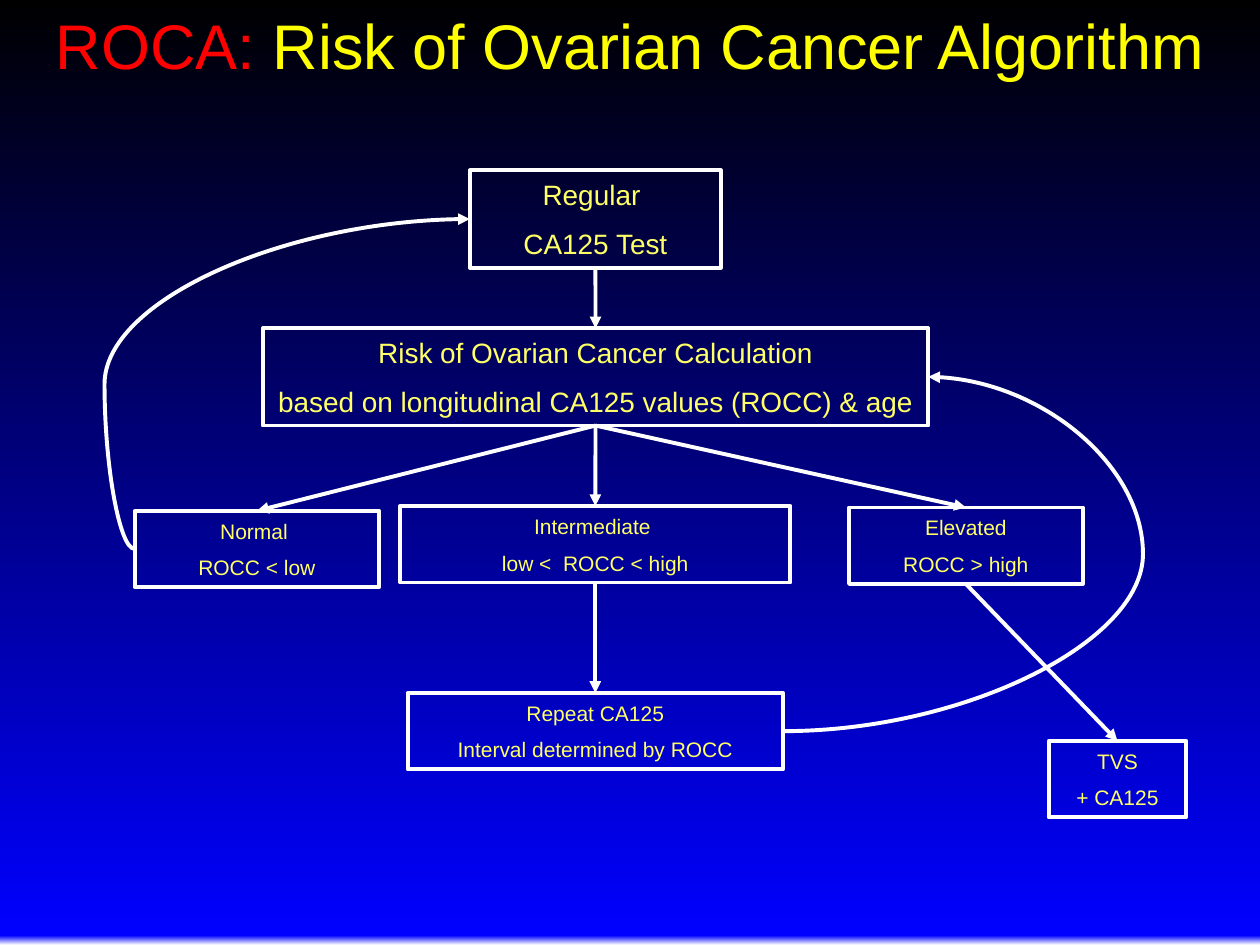
import copy
from dataclasses import dataclass
from typing import Optional

import lxml.etree
import pptx
import pptx.dml.color
import pptx.enum.dml
import pptx.enum.shapes
import pptx.enum.text
import pptx.oxml
import pptx.oxml.ns
import pptx.util

Pt = pptx.util.Pt
qn = pptx.oxml.ns.qn
CENTER = pptx.enum.text.PP_ALIGN.CENTER
MIDDLE = pptx.enum.text.MSO_ANCHOR.MIDDLE

FONT = "Arial"
LINE_WIDTH = 2.25
COLORS = {
    "line": "FFFFFF",
    "label": "FFFF66",
    "acronym": "FF0000",
    "title": "FFFF00",
}
BACKGROUND_STOPS = [(0, "FFFFFF"), (0.01, "0000FF"), (1, "000000")]

# Connection sites of a rectangle
TOP, LEFT, BOTTOM, RIGHT = range(4)


@dataclass
class Box:
    name: str
    left: float
    top: float
    width: float
    height: float
    size: float
    lines: tuple[str, str]


@dataclass
class Arrow:
    start: str
    start_site: int
    end: str
    end_site: int
    bend: Optional[float] = None  # share of the width; None is straight


BOXES = [
    Box("test", 268.5, 97.4, 143.5, 55.6, 16, ("Regular ", "CA125 Test")),
    Box("calculation", 150.2, 187.6, 380.2, 55.6, 16,
        ("Risk of Ovarian Cancer Calculation",
         "based on longitudinal CA125 values (ROCC) & age")),
    Box("normal", 77, 291.9, 139.7, 43.7, 12, ("Normal ", "ROCC < low")),
    Box("intermediate", 228.7, 289.2, 223, 43.7, 12,
        ("Intermediate ", "low <  ROCC < high")),
    Box("elevated", 485.2, 290, 133.5, 43.7, 12, ("Elevated", "ROCC > high")),
    Box("repeat", 232.9, 396, 214.6, 43.7, 12,
        ("Repeat CA125", "Interval determined by ROCC")),
    Box("ultrasound", 599.3, 423.4, 78.5, 43.7, 12, ("TVS", "+ CA125")),
]

ARROWS = [
    Arrow("test", BOTTOM, "calculation", TOP),
    Arrow("calculation", BOTTOM, "normal", TOP),
    Arrow("calculation", BOTTOM, "intermediate", TOP),
    Arrow("calculation", BOTTOM, "elevated", TOP),
    Arrow("intermediate", BOTTOM, "repeat", TOP),
    Arrow("elevated", BOTTOM, "ultrasound", TOP),
    Arrow("repeat", RIGHT, "calculation", RIGHT, 2.48),
    Arrow("normal", LEFT, "test", LEFT, -0.09),
]


def rgb(name: str) -> pptx.dml.color.RGBColor:
    return pptx.dml.color.RGBColor.from_string(COLORS[name])


def add_run(paragraph, text: str, size: float, color: str) -> None:
    run = paragraph.add_run()
    run.text = text
    run.font.name = FONT
    run.font.size = Pt(size)
    run.font.color.rgb = rgb(color)


def set_line(line) -> None:
    line.color.rgb = rgb("line")
    line.width = Pt(LINE_WIDTH)


def set_background(slide) -> None:
    fill = slide.background.fill
    fill.gradient()
    fill.gradient_angle = 90
    stop_list = slide.background._cSld.find(".//" + qn("a:gsLst"))
    stop_list.append(copy.deepcopy(stop_list[-1]))
    for stop, (position, color) in zip(fill.gradient_stops, BACKGROUND_STOPS):
        stop.position = position
        stop.color.rgb = pptx.dml.color.RGBColor.from_string(color)


def add_title(slide) -> None:
    title = slide.shapes.title
    title.left, title.top = Pt(0), Pt(0)
    title.width, title.height = Pt(720), Pt(51)
    frame = title.text_frame
    frame.word_wrap = True
    frame.auto_size = pptx.enum.text.MSO_AUTO_SIZE.NONE
    frame.vertical_anchor = pptx.enum.text.MSO_ANCHOR.TOP
    paragraph = frame.paragraphs[0]
    paragraph.alignment = CENTER
    add_run(paragraph, "ROCA: ", 36, "acronym")
    add_run(paragraph, "Risk of Ovarian Cancer Algorithm", 36, "title")


def add_box(slide, box: Box):
    shape = slide.shapes.add_shape(
        pptx.enum.shapes.MSO_SHAPE.RECTANGLE,
        Pt(box.left), Pt(box.top), Pt(box.width), Pt(box.height))
    shape.shadow.inherit = False
    shape.fill.background()
    set_line(shape.line)
    frame = shape.text_frame
    frame.word_wrap = False
    frame.vertical_anchor = MIDDLE
    for index, text in enumerate(box.lines):
        paragraph = frame.add_paragraph() if index else frame.paragraphs[0]
        paragraph.alignment = CENTER
        paragraph.space_before = Pt(box.size * 0.55)
        add_run(paragraph, text, box.size, "label")
    return shape


def add_arrow(slide, arrow: Arrow, shapes: dict) -> None:
    kinds = pptx.enum.shapes.MSO_CONNECTOR
    kind = kinds.STRAIGHT if arrow.bend is None else kinds.CURVE
    connector = slide.shapes.add_connector(kind, 0, 0, 0, 0)
    connector.begin_connect(shapes[arrow.start], arrow.start_site)
    connector.end_connect(shapes[arrow.end], arrow.end_site)
    set_line(connector.line)
    properties = connector._element.spPr
    line = properties.find(qn("a:ln"))
    lxml.etree.SubElement(line, qn("a:tailEnd"), type="triangle")
    lxml.etree.SubElement(properties, qn("a:effectLst"))
    if arrow.bend is not None:
        adjustments = properties.find(".//" + qn("a:avLst"))
        lxml.etree.SubElement(adjustments, qn("a:gd"), name="adj1",
                              fmla=f"val {round(arrow.bend * 100000)}")


def main() -> None:
    presentation = pptx.Presentation()
    presentation.slide_width, presentation.slide_height = Pt(720), Pt(540)
    slide = presentation.slides.add_slide(presentation.slide_layouts[5])
    set_background(slide)
    add_title(slide)
    shapes = {box.name: add_box(slide, box) for box in BOXES}
    for arrow in ARROWS:
        add_arrow(slide, arrow, shapes)
    presentation.save("out.pptx")


if __name__ == "__main__":
    main()
